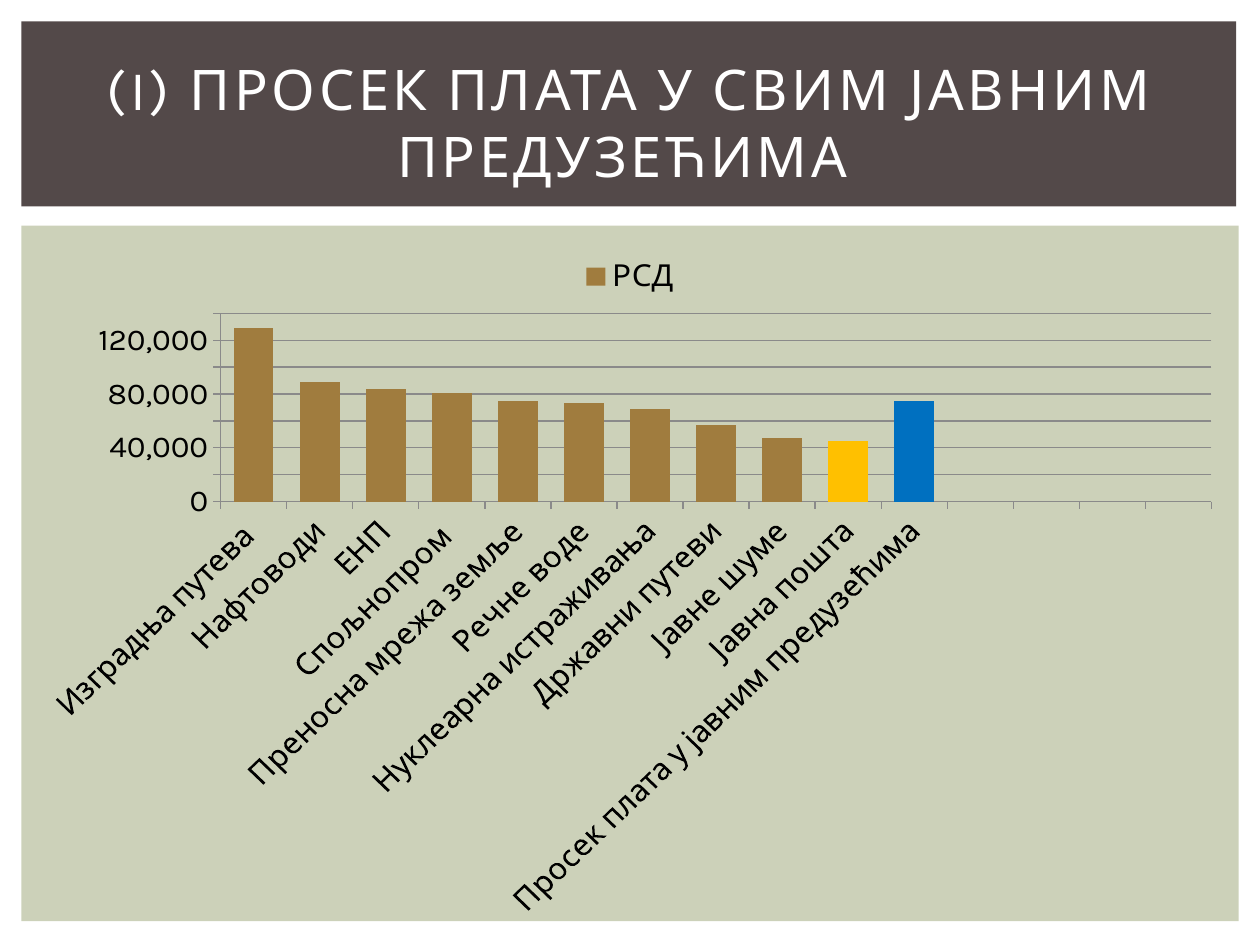
from lxml.etree import SubElement
from pptx import Presentation
from pptx.chart.data import CategoryChartData
from pptx.dml.color import RGBColor
from pptx.enum.chart import XL_CHART_TYPE, XL_LEGEND_POSITION, XL_TICK_MARK
from pptx.enum.shapes import MSO_SHAPE
from pptx.enum.text import MSO_ANCHOR, PP_ALIGN
from pptx.oxml.ns import qn
from pptx.util import Cm, Pt

# Content
FONT = "Karla"
TITLE = "(I) ПРОСЕК ПЛАТА У СВИМ ЈАВНИМ ПРЕДУЗЕЋИМА "
SALARIES = [
    ("Изградња путева ", 129000),
    ("Нафтоводи", 89000),
    ("ЕНП", 84000),
    ("Спољнопром ", 81000),
    ("Преносна мрежа земље", 75000),
    ("Речне воде", 73000),
    ("Нуклеарна истраживања", 69000),
    ("Државни путеви", 57000),
    ("Јавне шуме", 47000),
    ("Јавна пошта", 45000),
    ("Просек плата у јавним предузећима", 75000),
]
SLOTS = 15
SERIES = [("РСД", "A07C3E"), ("Series 2", "BF974D"), ("Series 3", "928B70")]
HIGHLIGHTS = {9: "FFC000", 10: "0070C0"}
LINE_COLOR = "8A8A8A"
# Left, top, width, height in cm
PANELS = [
    ((0.43, 4.55, 24.54, 14.02), "CCD1B9"),
    ((0.43, 0.43, 24.49, 3.73), "534949"),
]
CHART_BOX = (0.5, 4.92, 24.41, 13.59)
TITLE_BOX = (1.07, 0.99, 23.29, 2.92)


def color(value):
    return RGBColor.from_string(value)


def place(box):
    return [Cm(v) for v in box]


def paint(fill, value):
    fill.solid()
    fill.fore_color.rgb = color(value)


def draw_line(line):
    line.color.rgb = color(LINE_COLOR)
    line.width = Pt(0.75)


prs = Presentation()
prs.slide_width, prs.slide_height = Cm(25.4), Cm(19.05)
s = prs.slides.add_slide(prs.slide_layouts[6])

# Background panels
for box, fill in PANELS:
    sp = s.shapes.add_shape(MSO_SHAPE.RECTANGLE, *place(box))
    sp.shadow.inherit = False
    paint(sp.fill, fill)
    sp.line.fill.background()

# Salary chart: only the first series has values
empty = [None] * (SLOTS - len(SALARIES))
data = CategoryChartData(number_format="#,##0")
data.categories = [name for name, _ in SALARIES] + [""] * len(empty)
for i, (name, _) in enumerate(SERIES):
    row = [v for _, v in SALARIES] + empty
    data.add_series(name, row if i == 0 else [None] * SLOTS)
chart = s.shapes.add_chart(
    XL_CHART_TYPE.COLUMN_STACKED, *place(CHART_BOX), data).chart
chart.has_title = False
chart.font.name, chart.font.size = FONT, Pt(18)
chart.font.color.rgb = color("000000")

plot = chart.plots[0]
plot.gap_width, plot.overlap = 67, 100
plot.vary_by_categories = False
for bars, (_, fill) in zip(plot.series, SERIES):
    paint(bars.format.fill, fill)
for index, fill in HIGHLIGHTS.items():
    paint(plot.series[0].points[index].format.fill, fill)

# Unused slots carry no category label
for pt in plot._element.xpath(".//c:cat//c:pt"):
    if int(pt.get("idx")) >= len(SALARIES):
        pt.getparent().remove(pt)

# Legend shows the first series only
chart.has_legend = True
legend = chart.legend
legend.position = XL_LEGEND_POSITION.TOP
legend.include_in_layout = False
for index in range(1, len(SERIES)):
    entry = SubElement(legend._element, qn("c:legendEntry"))
    SubElement(entry, qn("c:idx")).set("val", str(index))
    SubElement(entry, qn("c:delete")).set("val", "1")
    legend._element.insert(index, entry)

# Axes
values = chart.value_axis
values.minimum_scale, values.maximum_scale = 0, 140000
values.major_unit = 20000
values.has_major_gridlines = True
values.tick_labels.number_format = "#,##0"
values.tick_labels.number_format_is_linked = False
for axis in (values, chart.category_axis):
    axis.major_tick_mark = XL_TICK_MARK.OUTSIDE
    axis.minor_tick_mark = XL_TICK_MARK.NONE
    draw_line(axis.format.line)
draw_line(values.major_gridlines.format.line)

# Title
tf = s.shapes.add_textbox(*place(TITLE_BOX)).text_frame
tf.word_wrap = True
tf.vertical_anchor = MSO_ANCHOR.MIDDLE
p = tf.paragraphs[0]
p.alignment = PP_ALIGN.CENTER
r = p.add_run()
r.text = TITLE
r.font.name, r.font.size = FONT, Pt(32)
r.font.color.rgb = color("FFFFFF")
r._r.get_or_add_rPr().set("spc", "200")

prs.save("out.pptx")
